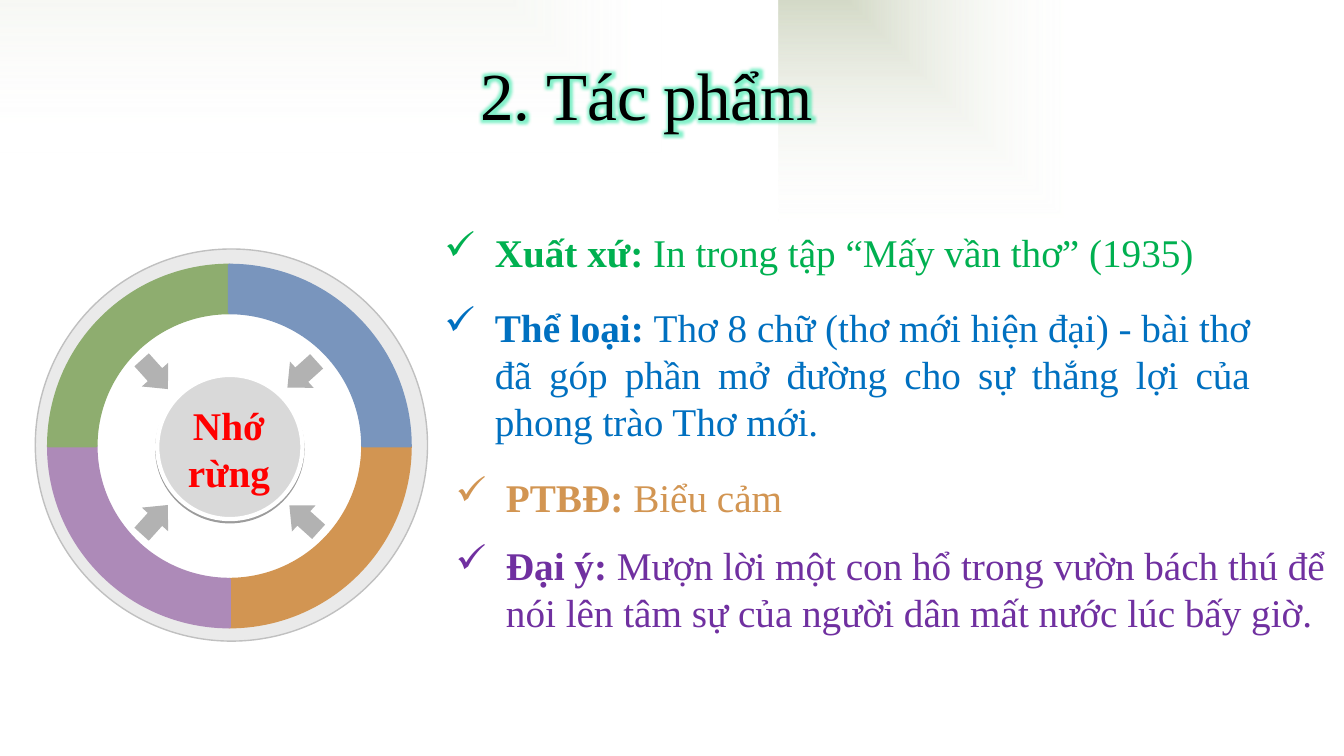
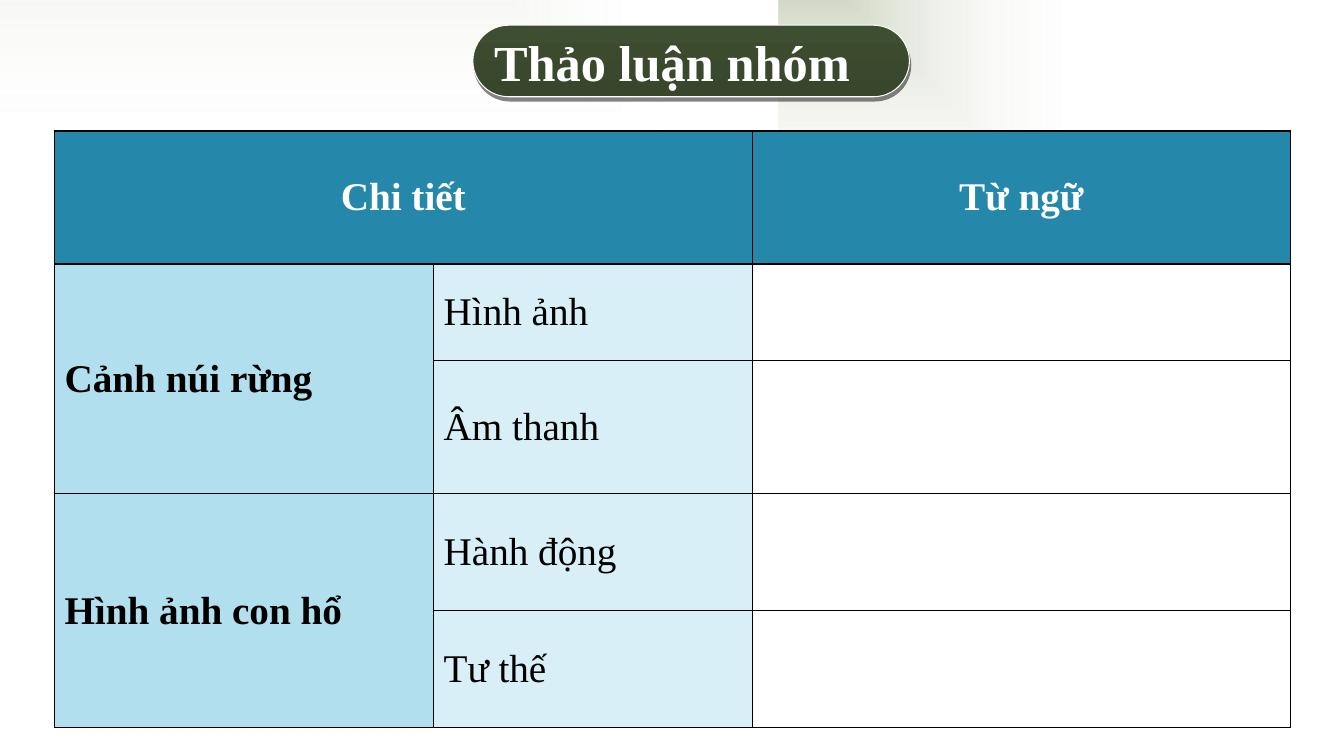
from pptx import Presentation
from pptx import util as u
from pptx.dml.color import RGBColor
from pptx.enum import shapes, text
from pptx.oxml import parse_xml

NS = 'xmlns:a="http://schemas.openxmlformats.org/drawingml/2006/main"'
FONT = "Times New Roman"
BLACK, WHITE, RED, SAGE = "000000", "FFFFFF", "FF0000", "CBD2BC"
KIND = shapes.MSO_SHAPE
MID = text.MSO_ANCHOR.MIDDLE
LEFT, CENTER, FULL = text.PP_ALIGN.LEFT, text.PP_ALIGN.CENTER, text.PP_ALIGN.JUSTIFY
rgb = RGBColor.from_string
CELL = u.Inches(0.1)  # grid step: columns and rows are tenths of an inch


def draw(slide, kind, box, fill, line=None, width=1, adj=(), shade=""):
    """Add a preset shape; fill is a hex string or gradient XML."""
    item = slide.shapes.add_shape(kind, *[int(n * CELL) for n in box])
    for i, val in enumerate(adj):
        item.adjustments[i] = val
    item.shadow.inherit = False
    item.fill.solid()
    if fill.startswith("<"):
        old = item.element.spPr.find("{*}solidFill")
        item.element.spPr.replace(old, parse_xml(fill))
    else:
        item.fill.fore_color.rgb = rgb(fill)
    if line:
        item.line.color.rgb = rgb(line)
        item.line.width = u.Pt(width)
    else:
        item.line.fill.background()
    if shade:
        item.element.spPr.find("{*}effectLst").append(parse_xml(shade))
    return item


def write(frame, parts, size, color, bold=False, align=LEFT, mark=""):
    """Fill a text frame with one paragraph; the first of two parts is bold."""
    frame.word_wrap = True
    para = frame.paragraphs[0]
    para.alignment = align
    if mark:
        prop = para._p.get_or_add_pPr()
        prop.set("marL", str(5 * CELL))
        prop.set("indent", str(-5 * CELL))
        prop.append(parse_xml(f'<a:buChar {NS} char="{mark}"/>'))
    para.font.name, para.font.size = FONT, u.Pt(size)
    para.font.color.rgb, para.font.bold = rgb(color), bold
    for part in parts:
        para.add_run().text = part
    if len(parts) > 1:
        para.runs[0].font.bold = True
    return para


prs = Presentation()
prs.slide_width, prs.slide_height = u.Inches(13.33), u.Inches(7.5)
work, group = [prs.slides.add_slide(prs.slide_layouts[6]) for _ in range(2)]

# Shared soft corner bands
for slide in (work, group):
    for box, alpha, flip in (((77.2, 0, 56.2, 51.7), 100, True),
                             ((0, 0, 97.8, 64.2), 70, False)):
        band = draw(slide, KIND.RECTANGLE, box, f'''<a:gradFill {NS} rotWithShape="1"><a:gsLst>
            <a:gs pos="0"><a:srgbClr val="{SAGE}"><a:alpha val="{alpha}000"/></a:srgbClr></a:gs>
            <a:gs pos="100000"><a:srgbClr val="{WHITE}"><a:alpha val="0"/></a:srgbClr></a:gs>
            </a:gsLst><a:path path="rect"><a:fillToRect r="100000" b="100000"/></a:path></a:gradFill>''')
        if flip:
            band.element.spPr.xfrm.set("flipH", "1")

# Slide 1: glowing title
title = work.shapes.add_textbox(*[int(n * CELL) for n in (35.7, 4.8, 56.9, 9.1)])
head = write(title.text_frame, ["2. Tác phẩm"], 48, BLACK, align=CENTER)
head.runs[0]._r.get_or_add_rPr().append(parse_xml(
    f'<a:effectLst {NS}><a:glow rad="101600"><a:srgbClr val="33E8A8">'
    '<a:alpha val="60000"/></a:srgbClr></a:glow></a:effectLst>'))

# Wheel: pale rim, four quarters, hub, arrows pointing in
rim = draw(work, KIND.DONUT, (3.5, 24.7, 38.9, 38.9), "DDDDDD", "C0C0C0", 1, [0.128])
rim.element.spPr.find("{*}solidFill")[0].append(parse_xml(f'<a:alpha {NS} val="60000"/>'))
for i, color in enumerate(("D29552", "AD8AB8", "8EAD6F", "7995BD")):
    turn = [90 * k % 360 * 0.6 for k in (i, i + 1)]
    draw(work, KIND.BLOCK_ARC, (4.8, 26.3, 35.9, 35.9), color, color, 2, turn + [0.132])
hub = draw(work, KIND.OVAL, (15.6, 37.2, 14.4, 14.3), "D9D9D9", WHITE, 3,
           shade=f'<a:outerShdw {NS} blurRad="0" dist="20320" dir="5400000">'
                 '<a:srgbClr val="000000"><a:alpha val="38000"/></a:srgbClr></a:outerShdw>')
for x, y, turn in ((13.6, 49.6, 42), (13.6, 35.2, 138), (28.2, 35.2, 228), (28.4, 49.5, 312)):
    arrow = draw(work, KIND.UP_ARROW, (x, y, 3.5, 3.9), "B2B2B2", adj=[0.55, 0.55])
    arrow.rotation = turn
name = work.shapes.add_textbox(*[int(n * CELL) for n in (16.7, 39.3, 12, 10.4)])
write(name.text_frame, ["Nhớ rừng"], 28, RED, True, CENTER)

# Checked facts
facts = [
    (43.1, 22.2, 79.3, 5.7, "00B050", LEFT, "Xuất xứ: ", "In trong tập “Mấy vần thơ” (1935)"),
    (43.1, 29.6, 81.9, 15.1, "0070C0", FULL, "Thể loại: ",
     "Thơ 8 chữ (thơ mới hiện đại) - bài thơ đã góp phần mở đường cho sự thắng lợi "
     "của phong trào Thơ mới."),
    (44.2, 46.5, 56.5, 5.7, "D29552", LEFT, "PTBĐ: ", "Biểu cảm"),
    (44.2, 53.2, 90.3, 10.4, "7030A0", LEFT, "Đại ý: ",
     "Mượn lời một con hổ trong vườn bách thú để nói lên tâm sự của người dân mất nước "
     "lúc bấy giờ."),
]
for *box, color, align, label, body in facts:
    note = work.shapes.add_textbox(*[int(n * CELL) for n in box])
    write(note.text_frame, [label, body], 28, color, align=align, mark="✓")

# Slide 2: pill heading
pill = draw(group, KIND.ROUNDED_RECTANGLE, (46.9, 2.5, 43.3, 7.1),
            f'''<a:gradFill {NS}><a:gsLst><a:gs pos="0"><a:srgbClr val="3E4E30"/></a:gs>
            <a:gs pos="100000"><a:srgbClr val="38462B"/></a:gs></a:gsLst>
            <a:lin ang="5400000"/></a:gradFill>''', WHITE, 0.75, [0.5],
            f'<a:outerShdw {NS} blurRad="0" dist="40640" dir="4320000">'
            '<a:srgbClr val="080808"><a:alpha val="50000"/></a:srgbClr></a:outerShdw>')
frame = pill.text_frame
frame.margin_left = frame.margin_top = frame.margin_bottom = 0
frame.margin_right = int(3.8 * CELL)
frame.vertical_anchor = MID
write(frame, ["Thảo luận nhóm"], 36, WHITE, True, CENTER)

# Discussion table
cols, rows = (37.6, 31.6, 53.4), (13.2, 9.6, 13.2, 11.6, 11.6)
grid = group.shapes.add_table(len(rows), len(cols), *[
    int(n * CELL) for n in (5.4, 13, sum(cols), sum(rows))]).table
grid.first_row = grid.horz_banding = False
for col, n in zip(grid.columns, cols):
    col.width = int(n * CELL)
for row, n in zip(grid.rows, rows):
    row.height = int(n * CELL)
words = [("Chi tiết", "", "Từ ngữ"),
         ("Cảnh núi rừng", "Hình ảnh", ""), ("", "Âm thanh", ""),
         ("Hình ảnh con hổ", "Hành động", ""), ("", "Tư thế", "")]
tints = ("B2DFEE", "D9EFF7", WHITE)
for r, line in enumerate(words):
    for c, word in enumerate(line):
        cell = grid.cell(r, c)
        prop = cell._tc.get_or_add_tcPr()
        for side in "LRTB":
            prop.append(parse_xml(f'<a:ln{side} {NS} w="12700"><a:solidFill>'
                                  f'<a:srgbClr val="{BLACK}"/></a:solidFill></a:ln{side}>'))
        cell.fill.solid()
        cell.fill.fore_color.rgb = rgb(tints[c] if r else "2587AA")
        cell.vertical_anchor = MID
        if word:
            write(cell.text_frame, [word], 28, BLACK if r else WHITE,
                  r == 0 or c == 0, LEFT if r else CENTER)
for top, left, low, right in ((0, 0, 0, 1), (1, 0, 2, 0), (3, 0, 4, 0)):
    grid.cell(top, left).merge(grid.cell(low, right))

prs.save("out.pptx")
